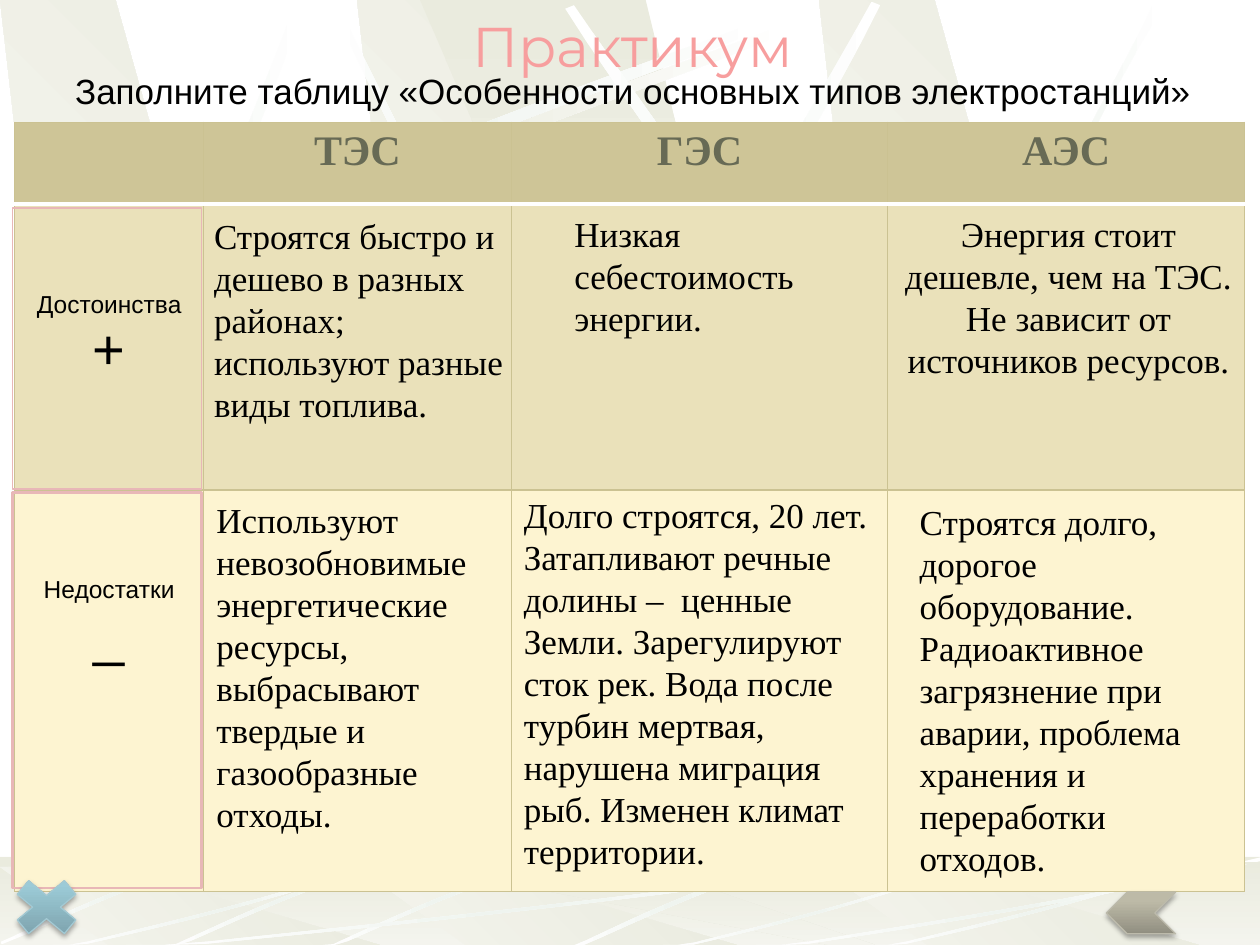
import pptx
import pptx.dml.color
import pptx.enum.shapes
import pptx.enum.text
import pptx.oxml
import pptx.oxml.ns
import pptx.util

Pt = pptx.util.Pt
RGBColor = pptx.dml.color.RGBColor
MSO_SHAPE = pptx.enum.shapes.MSO_SHAPE
CENTER = pptx.enum.text.PP_ALIGN.CENTER
LEFT = pptx.enum.text.PP_ALIGN.LEFT
qn = pptx.oxml.ns.qn

BLACK = RGBColor(0x00, 0x00, 0x00)
WHITE = RGBColor(0xFF, 0xFF, 0xFF)
IVORY = RGBColor(0xEA, 0xEB, 0xDE)
MIST = RGBColor(0xEF, 0xF4, 0xEF)
SAGE = RGBColor(0xDF, 0xEA, 0xDF)
HEADER_FILL = RGBColor(0xCE, 0xC5, 0x97)
PLUS_FILL = RGBColor(0xEA, 0xE1, 0xBA)
MINUS_FILL = RGBColor(0xFD, 0xF4, 0xD1)
GRID = RGBColor(0xCB, 0xC2, 0x92)
HEADER_TEXT = RGBColor(0x67, 0x6A, 0x55)
PINK = RGBColor(0xE8, 0xB7, 0xB7)
TITLE_STOPS = [(0, RGBColor(0x7F, 0x4F, 0x4F)), (78, RGBColor(0xF7, 0x9E, 0x9E)),
               (100, RGBColor(0xFF, 0xF5, 0xF5))]
BLUE_STOPS = [(0, RGBColor(0x78, 0x9C, 0xA6)), (80, RGBColor(0x9C, 0xCB, 0xD7)),
              (100, RGBColor(0x9C, 0xCC, 0xD9))]
BROWN_STOPS = [(0, RGBColor(0x91, 0x8F, 0x81)), (80, RGBColor(0xBD, 0xBA, 0xA7)),
               (100, RGBColor(0xBE, 0xBB, 0xA7))]
BLUE_LINE = RGBColor(0xA3, 0xC9, 0xD3)
BROWN_LINE = RGBColor(0xBC, 0xBA, 0xAB)
WHITE_TO_IVORY = [(0, WHITE), (100, IVORY)]
IVORY_TO_WHITE = [(0, IVORY), (100, WHITE)]
RIBBON_STOPS = [(0, WHITE), (50, MIST), (100, WHITE)]

SERIF = "Times New Roman"
TITLE = "Практикум"
SUBTITLE = "Заполните таблицу «Особенности основных типов электростанций»"
HEADERS = ["", "ТЭС", "ГЭС", "АЭС"]
ROW_LABELS = [("Достоинства", "+"), ("Недостатки", "_")]
COLUMN_WIDTHS = [108, 175.7, 215.3, 203.7]
ROW_HEIGHTS = [46.8, 163.4, 229.4]
ROW_FILLS = [HEADER_FILL, PLUS_FILL, MINUS_FILL]
ANSWERS = [  # frame, alignment, text
    ((115.2, 118.8, 190, 128), LEFT,
     "Строятся быстро и дешево в разных районах; используют разные виды топлива."),
    ((321.1, 118.1, 173.5, 80), LEFT, "Низкая\nсебестоимость энергии."),
    ((292.3, 278.6, 217.4, 225.4), LEFT,
     "Долго строятся, 20 лет. Затапливают речные долины –  ценные Земли. Зарегулируют "
     "сток рек. Вода после турбин мертвая, нарушена миграция рыб. Изменен климат территории."),
    ((116.6, 281.5, 175, 230.4), LEFT,
     "Используют невозобновимые энергетические ресурсы, выбрасывают твердые и "
     "газообразные отходы."),
    ((509.8, 118.1, 201.6, 104.4), CENTER,
     "Энергия стоит дешевле, чем на ТЭС. Не зависит от источников ресурсов."),
    ((518.4, 282.2, 193, 225.4), LEFT,
     "Строятся долго, дорогое оборудование. Радиоактивное загрязнение при аварии, "
     "проблема хранения и переработки отходов."),
]

RAY_OFFSETS = [204, 0, 468]
RAY_XS = (62, 217, 66, 0)
BEAM_XS = (474, 500, 369, 240)
# Each ribbon is two cubic curves: one edge out, the other edge back.
LONG_RIBBON = [(14, 198), (204, 96), (377, 42), (451, 13), (453, 17), (380, 50), (183, 109), (17, 205)]
UPPER_RIBBONS = [
    [(331, 314), (282, 168), (217, 55), (194, 4), (191, 5), (212, 57), (287, 186), (327, 316)],
    [(x - 4, y - 6) for x, y in LONG_RIBBON],
    [(17, 450), (67, 240), (142, 76), (169, 1), (174, 3), (149, 78), (62, 265), (23, 453)],
    [(277, 442), (359, 230), (459, 73), (498, 1), (503, 3), (467, 78), (350, 256), (284, 447)],
    [(580, 403), (482, 211), (372, 68), (328, 3), (323, 5), (365, 73), (493, 234), (575, 408)],
    [(531, 284), (586, 125), (639, 48), (660, 0), (667, 0), (602, 104), (554, 232), (536, 286)],
]
FLOOR_RIBBON = [(451.4, 491), (386.6, 510.5), (343.4, 534.2), (322.6, 542.9),
                (326.2, 543.6), (352.8, 531.4), (411.1, 504), (452.2, 493.2)]
SHORT_RIBBON = [(318.2, 489.6), (255.6, 507.6), (206.6, 532.8), (184.3, 542.2),
                (185, 543.6), (207.4, 535), (262.8, 506.2), (319.7, 491.8)]
SHORT_SHIFTS = [(0, 0), (-90, 0), (-184, -4)]
SWEEP = [(1, 0.04), (0.57, 0.57), (0.17, 0.85), (0, 1), (0, 0.99), (0.17, 0.81), (0.62, 0.5), (1, 0)]
SWEEP_FRAMES = [(72, 490, 444, 54), (30, 490, 192, 54), (379, 496, 166, 48),
                (498, 490, 192, 54), (432, 490, 288, 54)]


def xml(text):
    return pptx.oxml.parse_xml(text.replace(">", f" {pptx.oxml.ns.nsdecls('a')}>", 1))


def set_gradient(owner, properties, stops, angle):
    """Give a shape or font a gradient; angle is in degrees clockwise."""
    owner.fill.background()
    marks = "".join(f'<a:gs pos="{place * 1000}"><a:srgbClr val="{color}"/></a:gs>'
                    for place, color in stops)
    properties.replace(properties.find(qn("a:noFill")), xml(
        f'<a:gradFill rotWithShape="1"><a:gsLst>{marks}</a:gsLst>'
        f'<a:lin ang="{angle * 60000}" scaled="0"/></a:gradFill>'))


def write(frame, text, size, font="Arial", color=BLACK, bold=False, align=LEFT):
    """Fill a text frame; size is one number, or one number per line."""
    lines = text.split("\n")
    sizes = size if isinstance(size, tuple) else (size,) * len(lines)
    for index, (line, points) in enumerate(zip(lines, sizes)):
        paragraph = frame.paragraphs[0] if index == 0 else frame.add_paragraph()
        paragraph.alignment = align
        run = paragraph.add_run()
        run.text = line
        run.font.name, run.font.size, run.font.bold = font, Pt(points), bold
        run.font.color.rgb = color


def add_text(slide, frame, text, size, **style):
    box = slide.shapes.add_textbox(*map(Pt, frame))
    box.text_frame.word_wrap = True
    write(box.text_frame, text, size, **style)
    return box


def add_preset(slide, kind, frame, line=None, width=0.75):
    shape = slide.shapes.add_shape(kind, *map(Pt, frame))
    shape.shadow.inherit = False
    shape.fill.background()
    if line is None:
        shape.line.fill.background()
    else:
        shape.line.color.rgb, shape.line.width = line, Pt(width)
    return shape


def add_polygon(slide, points, stops, angle):
    corners = [(Pt(x), Pt(min(y, 540))) for x, y in points]
    builder = slide.shapes.build_freeform(*corners[0], scale=1.0)
    builder.add_line_segments(corners[1:], close=True)
    shape = builder.convert_to_shape()
    shape.shadow.inherit = False
    shape.line.fill.background()
    set_gradient(shape, shape._element.spPr, stops, angle)


def curve(p, q, r, s, steps=12):
    for step in range(steps + 1):
        t = step / steps
        u = 1 - t
        yield tuple(u**3 * a + 3 * u * u * t * b + 3 * u * t * t * c + t**3 * d
                    for a, b, c, d in zip(p, q, r, s))


def add_ribbon(slide, points, stops=RIBBON_STOPS):
    add_polygon(slide, [*curve(*points[:4]), *curve(*points[4:])], stops, 0)


def add_panels(slide, top):
    ys = (540, 540, top, top)
    for offset in RAY_OFFSETS:
        add_polygon(slide, [(x + offset, y) for x, y in zip(RAY_XS, ys)], WHITE_TO_IVORY, 315)
    add_polygon(slide, list(zip(BEAM_XS, ys)), IVORY_TO_WHITE, 90)


def add_band(slide, top, height, stops, angle):
    band = add_preset(slide, MSO_SHAPE.RECTANGLE, (0, top, 720, height))
    set_gradient(band, band._element.spPr, stops, angle)


def add_backdrop(slide):
    add_panels(slide, 0)
    add_ribbon(slide, LONG_RIBBON, [(0, WHITE), (50, IVORY), (100, WHITE)])
    for ribbon in UPPER_RIBBONS:
        add_ribbon(slide, ribbon)
    add_band(slide, 489.6, 50.4, IVORY_TO_WHITE, 90)
    add_panels(slide, 495.4)
    veil = add_preset(slide, MSO_SHAPE.RECTANGLE, (0, 489.6, 720, 50.4))
    veil.fill.solid()
    veil.fill.fore_color.rgb = IVORY
    veil._element.spPr.find(".//" + qn("a:srgbClr")).append(xml('<a:alpha val="50000"></a:alpha>'))
    add_ribbon(slide, FLOOR_RIBBON)
    for dx, dy in SHORT_SHIFTS:
        add_ribbon(slide, [(x + dx, y + dy) for x, y in SHORT_RIBBON])
    for left, top, width, height in SWEEP_FRAMES:
        add_ribbon(slide, [(left + x * width, top + y * height) for x, y in SWEEP])
    add_band(slide, 492.5, 1.4, [(0, IVORY), (50, SAGE), (100, IVORY)], 0)


def set_borders(cell, **sides):
    for index, side in enumerate("LRTB"):
        color, width = sides.get(side, (GRID, 0.75))
        cell._tc.get_or_add_tcPr().insert(index, xml(
            f'<a:ln{side} w="{Pt(width)}"><a:solidFill><a:srgbClr val="{color}"/>'
            f'</a:solidFill></a:ln{side}>'))


def add_comparison(slide):
    table = slide.shapes.add_table(3, 4, Pt(8.4), Pt(69.8), Pt(sum(COLUMN_WIDTHS)),
                                   Pt(sum(ROW_HEIGHTS))).table
    table.first_row = table.horz_banding = False
    for column, width in zip(table.columns, COLUMN_WIDTHS):
        column.width = Pt(width)
    for index, (row, height, fill) in enumerate(zip(table.rows, ROW_HEIGHTS, ROW_FILLS)):
        row.height = Pt(height)
        for cell in row.cells:
            cell.fill.solid()
            cell.fill.fore_color.rgb = fill
            rule = {0: {"B": (WHITE, 2)}, 1: {"T": (WHITE, 2)}}.get(index, {})
            set_borders(cell, **rule)
    for cell, text in zip(table.rows[0].cells, HEADERS):
        if text:
            write(cell.text_frame, text, 24, font=SERIF, color=HEADER_TEXT, bold=True, align=CENTER)
    for index, label in enumerate(ROW_LABELS, 1):
        cell = table.cell(index, 0)
        cell.margin_top = Pt(49.6)
        write(cell.text_frame, "\n".join(label), (14, 32), align=CENTER)


def add_button(slide, kind, frame, stops, line):
    button = add_preset(slide, kind, frame, line)
    properties = button._element.spPr
    set_gradient(button, properties, stops, 270)
    properties.find(qn("a:effectLst")).append(xml(
        f'<a:outerShdw blurRad="{Pt(3.1)}" dist="{Pt(1.8)}" dir="5400000" rotWithShape="0">'
        '<a:srgbClr val="000000"><a:alpha val="35000"/></a:srgbClr></a:outerShdw>'))
    return button


def main():
    presentation = pptx.Presentation()
    presentation.slide_width, presentation.slide_height = Pt(720), Pt(540)
    slide = presentation.slides.add_slide(presentation.slide_layouts[6])
    add_backdrop(slide)
    title = add_text(slide, (2.2, 2.9, 718.6, 46), TITLE, 32, font="Montserrat", align=CENTER)
    font = title.text_frame.paragraphs[0].runs[0].font
    set_gradient(font, font._element, TITLE_STOPS, 90)
    add_comparison(slide)
    add_text(slide, (7.2, 36, 709.2, 31.7), SUBTITLE, 20, align=CENTER)
    for frame, align, text in ANSWERS:
        add_text(slide, frame, text, 20, font=SERIF, align=align)
    add_preset(slide, MSO_SHAPE.RECTANGLE, (7.2, 281.5, 108, 226), PINK, 1.5)
    add_preset(slide, MSO_SHAPE.RECTANGLE, (7.2, 118.8, 108, 160.6), PINK, 1)
    add_button(slide, MSO_SHAPE.MATH_MULTIPLY, (0.7, 496.8, 51.8, 43.2), BLUE_STOPS, BLUE_LINE)
    back = add_button(slide, MSO_SHAPE.CHEVRON, (632.2, 509.8, 39.6, 23.8), BROWN_STOPS, BROWN_LINE)
    back._element.spPr.find(qn("a:xfrm")).set("flipH", "1")
    presentation.save("out.pptx")


if __name__ == "__main__":
    main()
